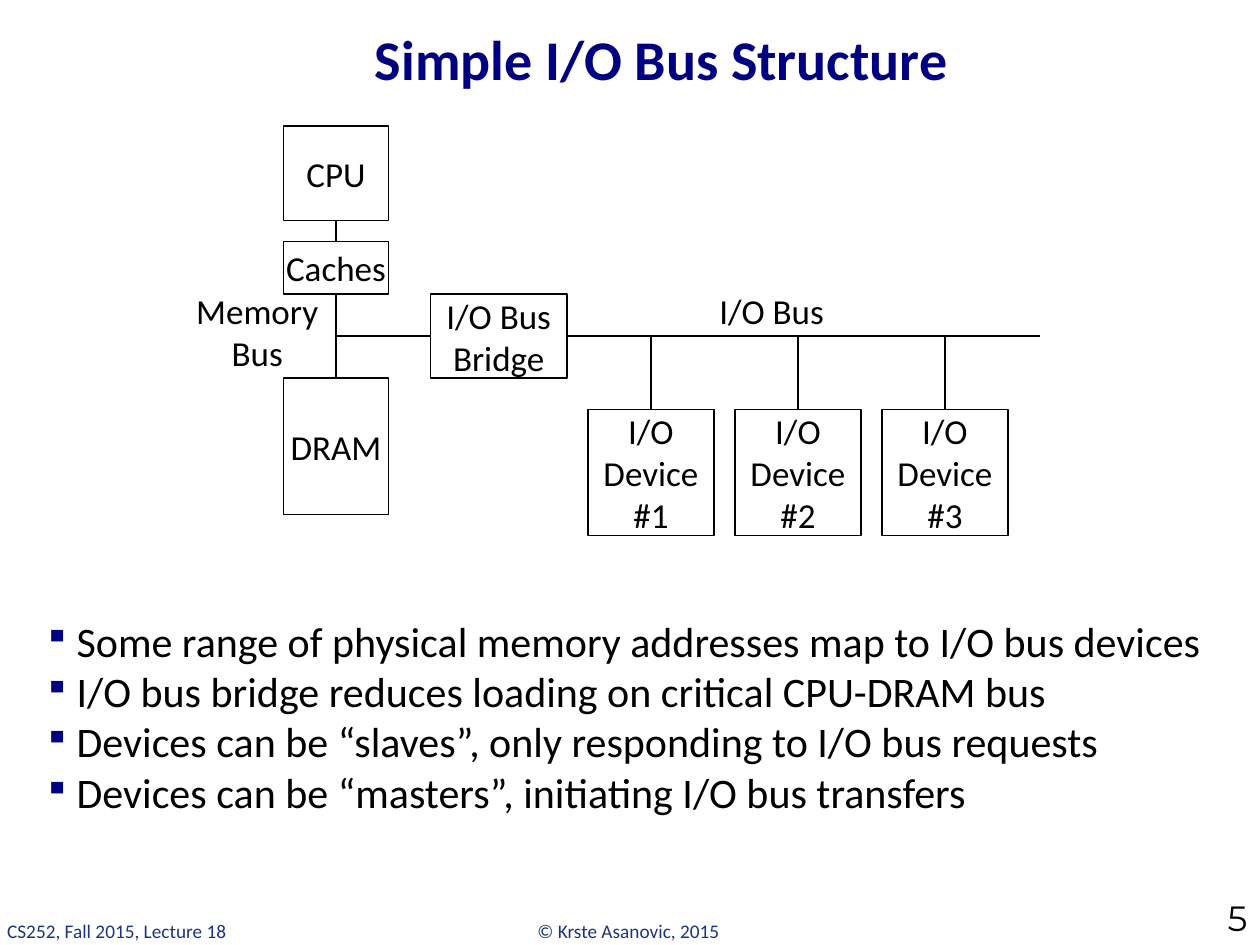
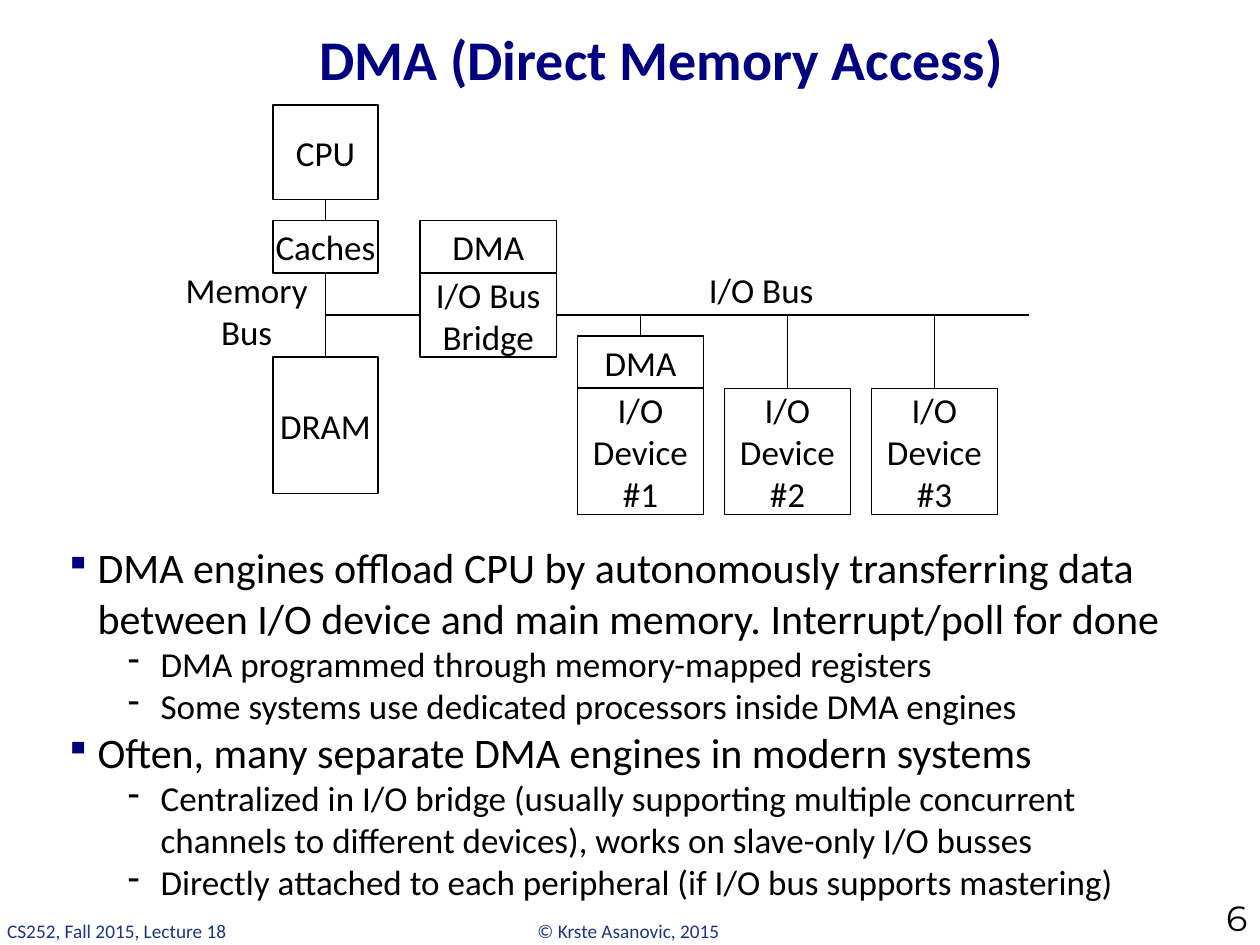
"""Build two lecture slides on I/O bus structure and DMA."""
from dataclasses import dataclass

from lxml import etree
from pptx import Presentation
from pptx.dml.color import RGBColor
from pptx.enum.shapes import MSO_CONNECTOR, MSO_SHAPE
from pptx.enum.text import MSO_ANCHOR, MSO_AUTO_SIZE, PP_ALIGN
from pptx.oxml.ns import qn
from pptx.util import Pt

RECT = MSO_SHAPE.RECTANGLE
STRAIGHT = MSO_CONNECTOR.STRAIGHT
LEFT, CENTER, RIGHT = PP_ALIGN.LEFT, PP_ALIGN.CENTER, PP_ALIGN.RIGHT
TOP, MIDDLE, BOTTOM = MSO_ANCHOR.TOP, MSO_ANCHOR.MIDDLE, MSO_ANCHOR.BOTTOM
NO_FIT, GROW = MSO_AUTO_SIZE.NONE, MSO_AUTO_SIZE.SHAPE_TO_FIT_TEXT
SIDE_TOP, SIDE_LEFT, SIDE_BOTTOM, SIDE_RIGHT = range(4)
TITLE_ONLY = 5


@dataclass(frozen=True)
class Theme:
    """Colours, fonts and sizes shared by the slides."""
    ink: RGBColor = RGBColor(0x00, 0x00, 0x00)
    paper: RGBColor = RGBColor(0xFF, 0xFF, 0xFF)
    title: RGBColor = RGBColor(0x00, 0x00, 0x81)
    footer: RGBColor = RGBColor(0x1B, 0x33, 0x84)
    bullet: str = "000080"
    font: str = "Calibri"
    number_font: str = "Montserrat"
    title_size: int = 32
    level_sizes: tuple = (24, 20)
    label_size: int = 20
    footer_size: int = 11
    line_width: int = 1


THEME = Theme()


def add_run(p, text, size, color=THEME.ink, font=THEME.font, bold=False):
    """Append one formatted run to a paragraph."""
    r = p.add_run()
    r.text = text
    r.font.name = font
    r.font.size = Pt(size)
    r.font.bold = bold
    r.font.color.rgb = color


def add_text(s, box, text, size, align=LEFT, anchor=TOP, wrap=True, fit=NO_FIT, **style):
    """Add a text box with a single paragraph."""
    tf = s.shapes.add_textbox(*map(Pt, box)).text_frame
    tf.word_wrap = wrap
    tf.auto_size = fit
    tf.vertical_anchor = anchor
    p = tf.paragraphs[0]
    p.alignment = align
    add_run(p, text, size, **style)


def add_box(s, x, y, w, h, text):
    """Add an outlined block with centred text."""
    sp = s.shapes.add_shape(RECT, Pt(x), Pt(y), Pt(w), Pt(h))
    sp.shadow.inherit = False
    sp.fill.solid()
    sp.fill.fore_color.rgb = THEME.paper
    sp.line.color.rgb = THEME.ink
    sp.line.width = Pt(THEME.line_width)
    tf = sp.text_frame
    tf.word_wrap = True
    tf.vertical_anchor = MIDDLE
    tf.margin_left = tf.margin_top = tf.margin_right = tf.margin_bottom = 0
    p = tf.paragraphs[0]
    p.alignment = CENTER
    add_run(p, text, THEME.label_size)
    return sp


def add_wire(s, start, end, begin=None, finish=None):
    """Draw a line between two points, joined to (shape, side) pairs if given."""
    wire = s.shapes.add_connector(STRAIGHT, *map(Pt, start + end))
    wire.line.color.rgb = THEME.ink
    wire.line.width = Pt(THEME.line_width)
    etree.SubElement(wire._element.spPr, qn("a:effectLst"))
    if begin:
        wire.begin_connect(*begin)
    if finish:
        wire.end_connect(*finish)


def set_bullet(p, level):
    """Give a paragraph the hanging indent and bullet of its level."""
    pPr = p._p.get_or_add_pPr()
    pPr.set("marL", str(Pt(18.75 + 36 * level)))
    pPr.set("indent", str(-Pt(18.75)))
    if level == 0:
        color = etree.SubElement(pPr, qn("a:buClr"))
        etree.SubElement(color, qn("a:srgbClr"), val=THEME.bullet)
        etree.SubElement(pPr, qn("a:buSzPct"), val="85000")
    etree.SubElement(pPr, qn("a:buChar"), char="▪-"[level])


def add_bullets(s, box, items):
    """Add a bulleted list from (level, text) pairs."""
    tf = s.shapes.add_textbox(*map(Pt, box)).text_frame
    tf.word_wrap = True
    for i, (level, text) in enumerate(items):
        p = tf.add_paragraph() if i else tf.paragraphs[0]
        p.level = level
        set_bullet(p, level)
        add_run(p, text, THEME.level_sizes[level])


def add_slide(prs, title, number):
    """Add a slide with its title, footers and number."""
    s = prs.slides.add_slide(prs.slide_layouts[TITLE_ONLY])
    for x, w, text in ((300, 120, "© Krste Asanovic, 2015"),
                       (-3, 141, "CS252, Fall 2015, Lecture 18")):
        add_text(s, (x, 522, w, 20.6), text, THEME.footer_size,
                 wrap=False, fit=GROW, color=THEME.footer)
    sp = s.shapes.title
    sp.left, sp.top, sp.width, sp.height = map(Pt, (96, 6, 564, 54))
    tf = sp.text_frame
    tf.auto_size = NO_FIT
    tf.vertical_anchor = MIDDLE
    p = tf.paragraphs[0]
    p.alignment = CENTER
    add_run(p, title, THEME.title_size, color=THEME.title, bold=True)
    add_text(s, (654, 521.5, 66, 18.5), str(number), THEME.label_size,
             align=RIGHT, anchor=BOTTOM, font=THEME.number_font)
    return s


def add_bus_diagram(s, x, y, dma=False):
    """Draw the memory and I/O buses from the CPU corner, with DMA engines if asked."""
    memory_x, bus_y = x + 30, y + 120
    cpu = add_box(s, x, y, 60, 54, "CPU")
    caches = add_box(s, x, y + 66, 60, 30, "Caches")
    dram = add_box(s, x, y + 144, 60, 78, "DRAM")
    bridge = add_box(s, x + 84, y + 96, 78, 48, "I/O Bus Bridge")
    add_wire(s, (memory_x, y + 54), (memory_x, y + 66),
             (cpu, SIDE_BOTTOM), (caches, SIDE_TOP))
    add_wire(s, (memory_x, y + 96), (memory_x, y + 144),
             (caches, SIDE_BOTTOM), (dram, SIDE_TOP))
    add_wire(s, (memory_x, bus_y), (x + 84, bus_y), finish=(bridge, SIDE_LEFT))
    add_wire(s, (x + 162, bus_y), (x + 432, bus_y), begin=(bridge, SIDE_RIGHT))
    for dx, h, text in ((-66, 55.5, "Memory Bus"), (228, 31.5, "I/O Bus")):
        add_text(s, (x + dx, y + 90, 102, h), text, THEME.label_size, align=CENTER, fit=GROW)
    for i in range(3):
        device_x, device_y = x + 174 + 84 * i, y + 162
        device = add_box(s, device_x, device_y, 72, 72, f"I/O Device #{i + 1}")
        add_wire(s, (device_x + 36, device_y), (device_x + 36, bus_y), (device, SIDE_TOP))
    if dma:
        add_box(s, x + 84, y + 66, 78, 30, "DMA")
        add_box(s, x + 174, y + 132, 72, 30, "DMA")


def main():
    """Build and save the presentation."""
    prs = Presentation()
    prs.slide_width, prs.slide_height = Pt(720), Pt(540)

    s = add_slide(prs, "Simple I/O Bus Structure", 5)
    add_bullets(s, (18, 348, 678, 114), [
        (0, "Some range of physical memory addresses map to I/O bus devices"),
        (0, "I/O bus bridge reduces loading on critical CPU-DRAM bus"),
        (0, "Devices can be “slaves”, only responding to I/O bus requests"),
        (0, "Devices can be “masters”, initiating I/O bus transfers"),
    ])
    add_bus_diagram(s, 162, 72)

    s = add_slide(prs, "DMA (Direct Memory Access)", 6)
    add_bullets(s, (30, 306, 648, 192), [
        (0, "DMA engines offload CPU by autonomously transferring data between "
            "I/O device and main memory. Interrupt/poll for done"),
        (1, "DMA programmed through memory-mapped registers"),
        (1, "Some systems use dedicated processors inside DMA engines"),
        (0, "Often, many separate DMA engines in modern systems"),
        (1, "Centralized in I/O bridge (usually supporting multiple concurrent "
            "channels to different devices), works on slave-only I/O busses"),
        (1, "Directly attached to each peripheral (if I/O bus supports mastering)"),
    ])
    add_bus_diagram(s, 156, 60, dma=True)

    prs.save("out.pptx")


if __name__ == "__main__":
    main()
